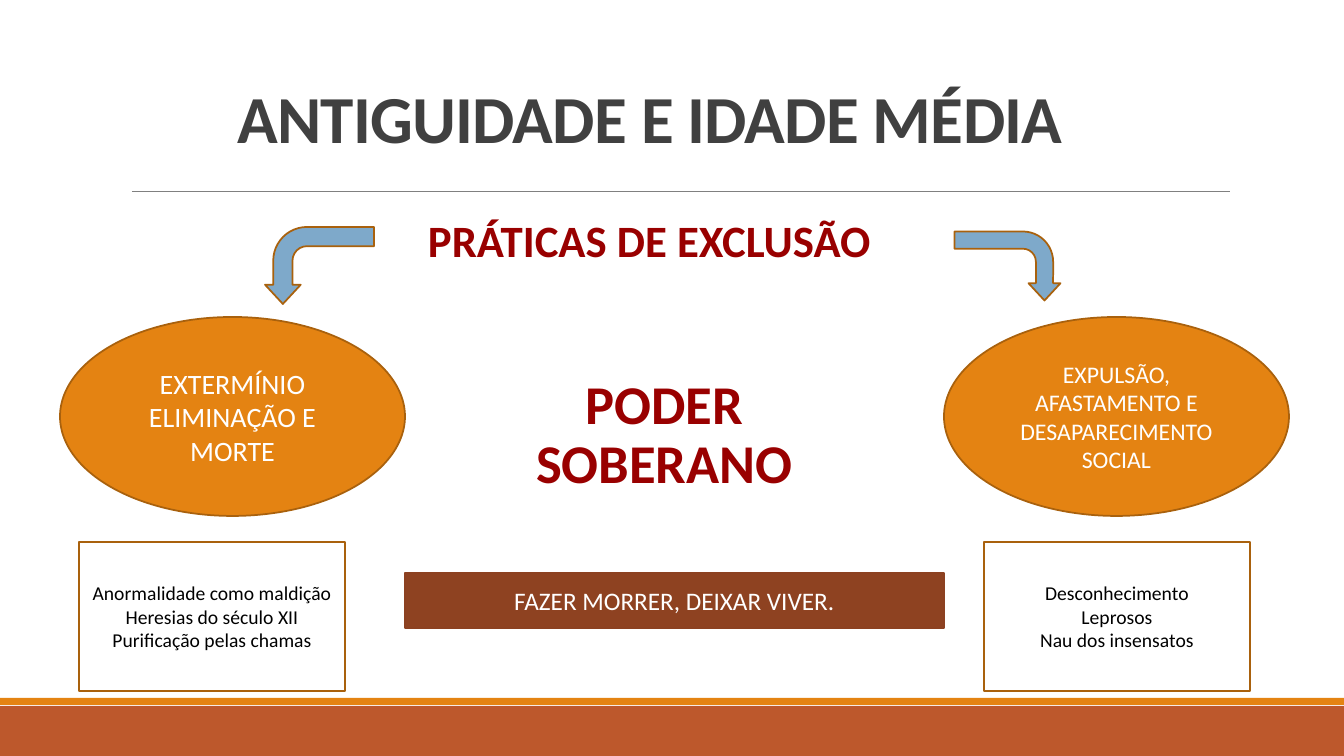
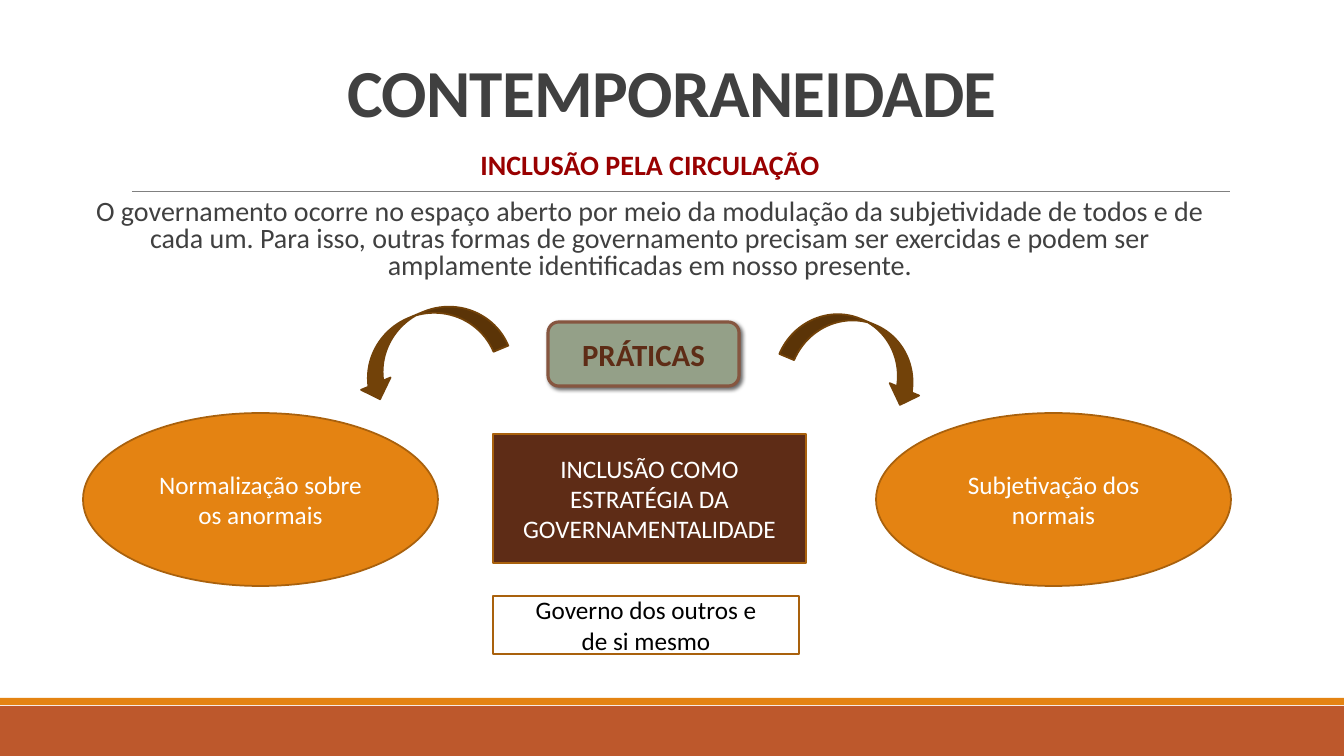
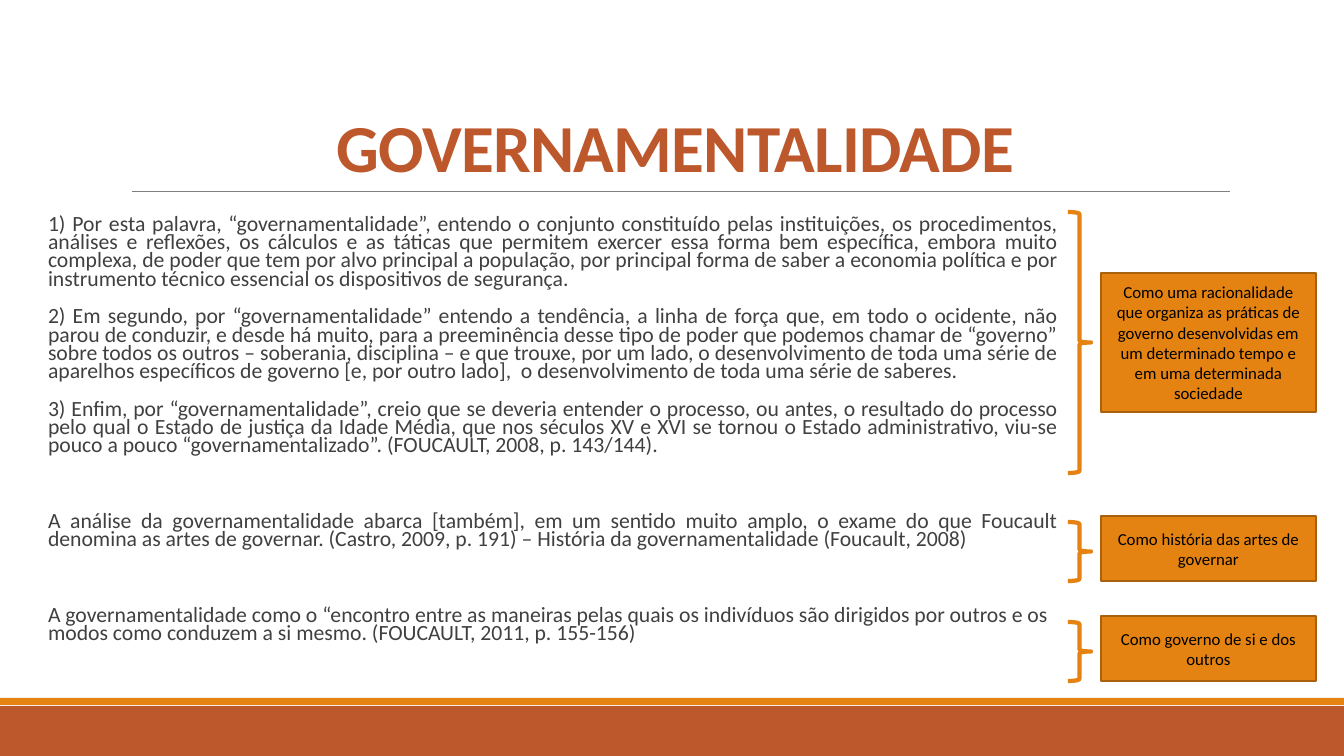
from dataclasses import dataclass, replace
from typing import NamedTuple, Optional, Sequence

from lxml.etree import SubElement
from pptx import Presentation
from pptx.dml.color import RGBColor
from pptx.enum.shapes import MSO_CONNECTOR, MSO_SHAPE
from pptx.enum.text import MSO_ANCHOR, PP_ALIGN
from pptx.oxml.ns import qn
from pptx.shapes.autoshape import Shape
from pptx.slide import Slide
from pptx.text.text import TextFrame
from pptx.util import Emu, Pt

SLIDE_WIDTH, SLIDE_HEIGHT = 1344, 756
EMU_PER_PX = 12192000 / SLIDE_WIDTH
FONT = "Calibri"

WHITE = RGBColor(0xFF, 0xFF, 0xFF)
BLACK = RGBColor(0x00, 0x00, 0x00)
GRAY = RGBColor(0x80, 0x80, 0x80)
CHARCOAL = RGBColor(0x40, 0x40, 0x40)
ORANGE = RGBColor(0xE4, 0x83, 0x12)
BRONZE = RGBColor(0xA9, 0x61, 0x0D)
RUST = RGBColor(0xBD, 0x58, 0x2C)
RED = RGBColor(0x99, 0x00, 0x00)
BLUE = RGBColor(0x7E, 0xA9, 0xCA)
BRICK = RGBColor(0x8E, 0x42, 0x21)
BRICK_EDGE = RGBColor(0x8C, 0x41, 0x21)
SAGE = RGBColor(0x94, 0xA0, 0x88)
SAGE_EDGE = RGBColor(0x86, 0x56, 0x40)
MAROON = RGBColor(0x5E, 0x2C, 0x16)
BROWN = RGBColor(0x72, 0x42, 0x09)


class Box(NamedTuple):
    left: int
    top: int
    width: int
    height: int


@dataclass(frozen=True)
class TextStyle:
    size: float
    color: RGBColor
    bold: bool = False
    align: PP_ALIGN = PP_ALIGN.CENTER
    line_spacing: float = 1.0
    before: float = 0
    after: float = 0
    tracking: int = 0


@dataclass(frozen=True)
class ShapeStyle:
    kind: MSO_SHAPE
    fill: Optional[RGBColor] = None
    edge: Optional[RGBColor] = BRONZE
    edge_width: float = 1.25


class Paragraph(NamedTuple):
    text: str
    style: TextStyle


class Turn(NamedTuple):
    """Rotation in degrees and the flip attribute, if any."""
    angle: float
    flip: str = ""


class Topic(NamedTuple):
    brace_top: int
    brace_height: int
    note_top: int
    note_height: int
    note: str


TITLE = TextStyle(48, CHARCOAL, True, line_spacing=0.85, tracking=-50)
HEADING = TextStyle(32, RED, True, PP_ALIGN.LEFT, 0.9)
WHITE_TEXT = TextStyle(18, WHITE)
BLACK_TEXT = TextStyle(18, BLACK)
BODY = TextStyle(20, CHARCOAL, line_spacing=0.8, before=12, after=2)
QUOTE = TextStyle(15.5, CHARCOAL, align=PP_ALIGN.JUSTIFY,
                  line_spacing=0.7, before=12, after=2)
QUOTE_APART = replace(QUOTE, before=39)

OVAL = ShapeStyle(MSO_SHAPE.OVAL, ORANGE)
OUTLINED = ShapeStyle(MSO_SHAPE.RECTANGLE)
BENT_ARROW = ShapeStyle(MSO_SHAPE.BENT_ARROW, BLUE)
CURVED_ARROW = ShapeStyle(MSO_SHAPE.CURVED_DOWN_ARROW, BROWN, BROWN)
BRACE = ShapeStyle(MSO_SHAPE.RIGHT_BRACE, None, ORANGE, 3)
BENT_ADJUSTMENTS = (0.25, 0.232, 0.25, 0.438)


def px(length: int) -> Emu:
    return Emu(round(length * EMU_PER_PX))


def write(frame: TextFrame, paragraphs: Sequence[Paragraph]) -> None:
    frame.word_wrap = True
    frame.text = "\n".join(item.text for item in paragraphs)
    for paragraph, (_, style) in zip(frame.paragraphs, paragraphs):
        paragraph.alignment = style.align
        paragraph.line_spacing = style.line_spacing
        paragraph.space_before = Pt(style.before)
        paragraph.space_after = Pt(style.after)
        for run in paragraph.runs:
            font = run.font
            font.name, font.size, font.bold = FONT, Pt(style.size), style.bold
            font.color.rgb = style.color
            if style.tracking:
                run.font._element.set("spc", str(style.tracking))


def styled(style: TextStyle, *lines: str) -> list[Paragraph]:
    return [Paragraph(line, style) for line in lines]


def add_text(slide: Slide, box: Box, paragraphs: Sequence[Paragraph],
             anchor: MSO_ANCHOR = MSO_ANCHOR.TOP, side_inset: int = 10) -> None:
    frame = slide.shapes.add_textbox(*map(px, box)).text_frame
    frame.vertical_anchor = anchor
    frame.margin_left = frame.margin_right = px(side_inset)
    write(frame, paragraphs)


def add_figure(slide: Slide, box: Box, style: ShapeStyle,
               paragraphs: Sequence[Paragraph] = (),
               turn: Turn = Turn(0)) -> Shape:
    shape = slide.shapes.add_shape(style.kind, *map(px, box))
    shape.shadow.inherit = False
    if style.fill is None:
        shape.fill.background()
    else:
        shape.fill.solid()
        shape.fill.fore_color.rgb = style.fill
    if style.edge is None:
        shape.line.fill.background()
    else:
        shape.line.color.rgb = style.edge
        shape.line.width = Pt(style.edge_width)
    shape.rotation = turn.angle
    if turn.flip:
        shape.element.spPr.find(qn("a:xfrm")).set(turn.flip, "1")
    if paragraphs:
        shape.text_frame.vertical_anchor = MSO_ANCHOR.MIDDLE
        write(shape.text_frame, paragraphs)
    return shape


def add_soft_shadow(shape: Shape) -> None:
    effects = shape.element.spPr.find(qn("a:effectLst"))
    shadow = SubElement(effects, qn("a:outerShdw"), blurRad=str(Pt(3)),
                        dist=str(Pt(2)), dir="2700000", rotWithShape="0")
    color = SubElement(shadow, qn("a:srgbClr"), val=str(BLACK))
    SubElement(color, qn("a:alpha"), val="60000")


def start_slide(deck: Presentation, title: str, title_box: Box,
                title_style: TextStyle = TITLE) -> Slide:
    """Add a slide with the shared footer bands, divider and title."""
    slide = deck.slides.add_slide(deck.slide_layouts[6])
    for top, height, color in ((706, 50, RUST), (698, 7, ORANGE)):
        add_figure(slide, Box(0, top, SLIDE_WIDTH, height),
                   ShapeStyle(MSO_SHAPE.RECTANGLE, color, None))
    divider = slide.shapes.add_connector(
        MSO_CONNECTOR.STRAIGHT, px(132), px(191), px(1230), px(191))
    divider.line.color.rgb = GRAY
    divider.line.width = Pt(0.5)
    SubElement(divider.element.spPr, qn("a:effectLst"))
    add_text(slide, title_box, styled(title_style, title), MSO_ANCHOR.BOTTOM)
    return slide


def build_antiquity(deck: Presentation) -> None:
    slide = start_slide(deck, "ANTIGUIDADE E IDADE MÉDIA", Box(45, 44, 1210, 118))
    add_text(slide, Box(418, 214, 571, 59), styled(HEADING, "PRÁTICAS DE EXCLUSÃO"))
    for left, size, practice in (
        (944, 17, "EXPULSÃO, AFASTAMENTO E DESAPARECIMENTO SOCIAL"),
        (60, 20, "EXTERMÍNIO ELIMINAÇÃO E MORTE"),
    ):
        add_figure(slide, Box(left, 317, 345, 199), OVAL,
                   styled(replace(WHITE_TEXT, size=size), practice))
    for box, turn in ((Box(973, 213, 69, 106), Turn(90)),
                      (Box(281, 211, 77, 109), Turn(90, "flipV"))):
        arrow = add_figure(slide, box, BENT_ARROW, turn=turn)
        for index, value in enumerate(BENT_ADJUSTMENTS):
            arrow.adjustments[index] = value
    add_text(slide, Box(470, 372, 389, 129),
             styled(replace(HEADING, size=39, align=PP_ALIGN.CENTER),
                    "PODER SOBERANO"))
    add_figure(slide, Box(405, 573, 539, 55),
               ShapeStyle(MSO_SHAPE.RECTANGLE, BRICK, BRICK_EDGE),
               styled(WHITE_TEXT, "FAZER MORRER, DEIXAR VIVER."))
    for left, examples in (
        (79, ("Anormalidade como maldição", "Heresias do século XII",
              "Purificação pelas chamas")),
        (984, ("Desconhecimento", "Leprosos", "Nau dos insensatos")),
    ):
        add_figure(slide, Box(left, 542, 266, 149), OUTLINED,
                   styled(replace(BLACK_TEXT, size=14), *examples))


def build_present(deck: Presentation) -> None:
    slide = start_slide(deck, "CONTEMPORANEIDADE", Box(67, 64, 1210, 72))
    add_text(slide, Box(83, 149, 1134, 149), [
        Paragraph("INCLUSÃO PELA CIRCULAÇÃO", replace(BODY, color=RED, bold=True)),
        Paragraph("O governamento ocorre no espaço aberto por meio da modulação da "
                  "subjetividade de todos e de cada um. Para isso, outras formas de "
                  "governamento precisam ser exercidas e podem ser amplamente "
                  "identificadas em nosso presente.", BODY),
    ], side_inset=0)
    practices = add_figure(
        slide, Box(548, 322, 191, 64),
        ShapeStyle(MSO_SHAPE.ROUNDED_RECTANGLE, SAGE, SAGE_EDGE, 2.25),
        styled(TextStyle(22, MAROON, True), "PRÁTICAS"))
    add_soft_shadow(practices)
    for left, practice in ((83, "Normalização sobre os anormais"),
                           (876, "Subjetivação dos normais")):
        add_figure(slide, Box(left, 413, 355, 173), OVAL,
                   styled(WHITE_TEXT, practice))
    add_figure(slide, Box(493, 434, 313, 129), replace(OUTLINED, fill=MAROON),
               styled(WHITE_TEXT, "INCLUSÃO COMO ESTRATÉGIA DA GOVERNAMENTALIDADE"))
    for box, turn in ((Box(347, 314, 155, 64), Turn(337.3, "flipH")),
                      (Box(786, 321, 147, 64), Turn(22.9))):
        add_figure(slide, box, CURVED_ARROW, turn=turn)
    add_figure(slide, Box(493, 596, 306, 58), replace(OUTLINED, fill=WHITE),
               styled(BLACK_TEXT, "Governo dos outros e", "de si mesmo"))


def build_governmentality(deck: Presentation) -> None:
    slide = start_slide(deck, "GOVERNAMENTALIDADE", Box(121, 31, 1109, 160),
                        replace(TITLE, color=RUST))
    definitions = styled(
        QUOTE,
        "1) Por esta palavra, “governamentalidade”, entendo o conjunto constituído "
        "pelas instituições, os procedimentos, análises e reflexões, os cálculos e "
        "as táticas que permitem exercer essa forma bem específica, embora muito "
        "complexa, de poder que tem por alvo principal a população, por principal "
        "forma de saber a economia política e por instrumento técnico essencial os "
        "dispositivos de segurança.",
        "2) Em segundo, por “governamentalidade” entendo a tendência, a linha de "
        "força que, em todo o ocidente, não parou de conduzir, e desde há muito, "
        "para a preeminência desse tipo de poder que podemos chamar de “governo” "
        "sobre todos os outros – soberania, disciplina – e que trouxe, por um lado, "
        "o desenvolvimento de toda uma série de aparelhos específicos de governo "
        "[e, por outro lado],  o desenvolvimento de toda uma série de saberes.",
        "3) Enfim, por “governamentalidade”, creio que se deveria entender o "
        "processo, ou antes, o resultado do processo pelo qual o Estado de justiça "
        "da Idade Média, que nos séculos XV e XVI se tornou o Estado "
        "administrativo, viu-se pouco a pouco “governamentalizado”. (FOUCAULT, "
        "2008, p. 143/144).")
    arts = Paragraph(
        "A análise da governamentalidade abarca [também], em um sentido muito "
        "amplo, o exame do que Foucault denomina as artes de governar. (Castro, "
        "2009, p. 191) – História da governamentalidade (Foucault, 2008)",
        QUOTE_APART)
    encounter = Paragraph(
        "A governamentalidade como o “encontro entre as maneiras pelas quais os "
        "indivíduos são dirigidos por outros e os modos como conduzem a si mesmo. "
        "(FOUCAULT, 2011, p. 155-156)",
        replace(QUOTE_APART, align=PP_ALIGN.LEFT))
    add_text(slide, Box(48, 212, 1009, 470), [*definitions, arts, encounter],
             side_inset=0)
    for topic in (
        Topic(212, 261, 273, 139,
              "Como uma racionalidade que organiza as práticas de governo "
              "desenvolvidas em um determinado tempo e em uma determinada sociedade"),
        Topic(522, 59, 516, 65, "Como história das artes de governar"),
        Topic(622, 59, 616, 65, "Como governo de si e dos outros"),
    ):
        add_figure(slide, Box(1068, topic.brace_top, 23, topic.brace_height), BRACE)
        add_figure(slide, Box(1101, topic.note_top, 215, topic.note_height),
                   replace(OUTLINED, fill=ORANGE),
                   styled(replace(BLACK_TEXT, size=12), topic.note))


def main() -> None:
    deck = Presentation()
    deck.slide_width, deck.slide_height = px(SLIDE_WIDTH), px(SLIDE_HEIGHT)
    build_antiquity(deck)
    build_present(deck)
    build_governmentality(deck)
    deck.save("out.pptx")


if __name__ == "__main__":
    main()
